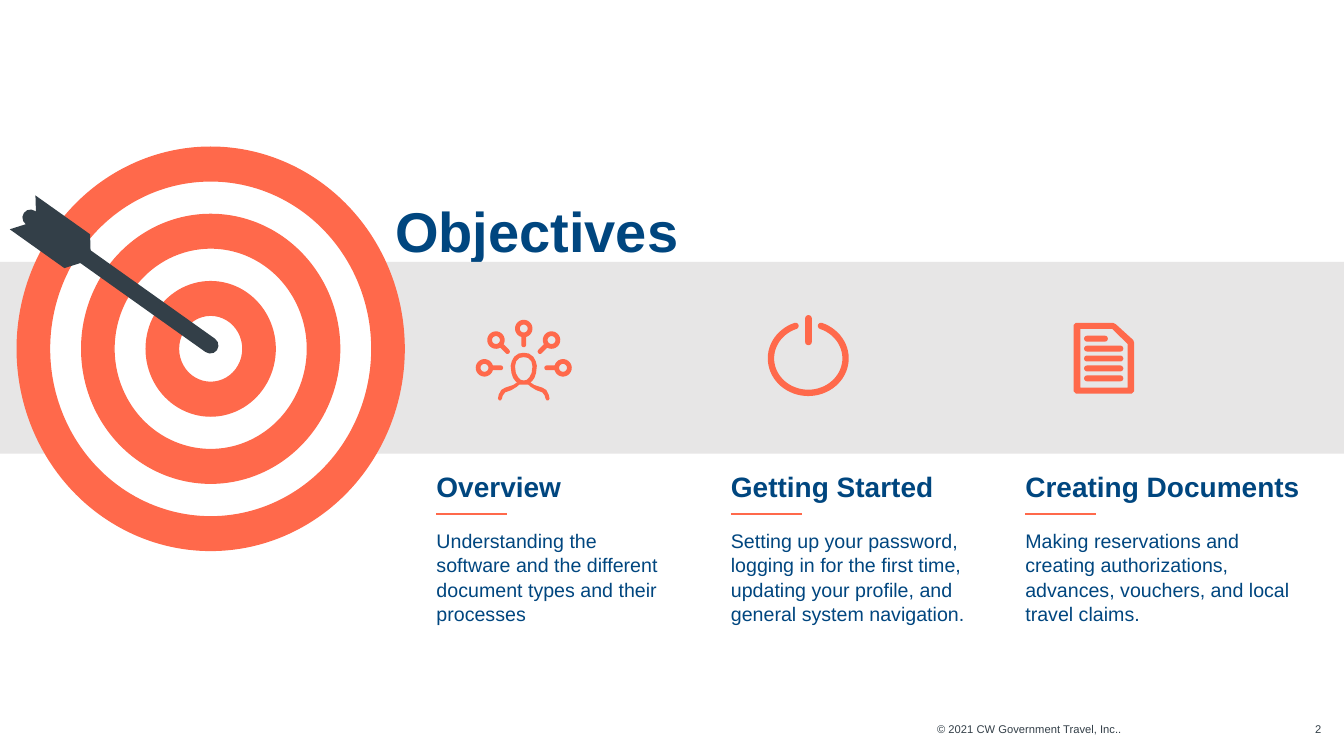
from math import asin, cos, degrees, radians, sin

from lxml.etree import SubElement
from pptx import Presentation
from pptx.dml.color import RGBColor
from pptx.enum.shapes import MSO_CONNECTOR as Line, MSO_SHAPE as Kind
from pptx.enum.text import MSO_ANCHOR as Anchor, MSO_AUTO_SIZE as Fit, PP_ALIGN as Align
from pptx.oxml.ns import qn
from pptx.util import Cm, Pt

CORAL, NAVY, SLATE, WHITE, GREY = "FF694B", "00467F", "333F48", "FFFFFF", "E7E6E6"


def tint(code):
    """Turn a hex string into a colour."""
    return RGBColor.from_string(code)


def paint(shape, fill, edge=None):
    """Give a shape its fill and optional outline."""
    shape.shadow.inherit = False
    shape.fill.solid()
    shape.fill.fore_color.rgb = tint(fill)
    if edge:
        shape.line.color.rgb = tint(edge)
        shape.line.width = Pt(1)
    else:
        shape.line.fill.background()
    return shape


def draw(shapes, kind, box, fill, edge=None):
    """Add a painted preset shape in a box given in centimetres."""
    return paint(shapes.add_shape(kind, *map(Cm, box)), fill, edge)


def pill(shapes, box, fill):
    """Add a bar with fully rounded ends."""
    bar = draw(shapes, Kind.ROUNDED_RECTANGLE, box, fill)
    bar.adjustments[0] = 0.5
    return bar


def outline(shapes, x, y, loops, fill):
    """Add one freeform made of closed loops placed relative to x, y."""
    pen = None
    for loop in loops:
        first, *rest = [(Cm(x + dx), Cm(y + dy)) for dx, dy in loop]
        if pen is None:
            pen = shapes.build_freeform(*first, scale=1.0)
        else:
            pen.move_to(*first)
        pen.add_line_segments(rest, close=True)
    return paint(pen.convert_to_shape(), fill)


def arc(x, y, wide, high, start, stop, steps=24):
    """List points along an elliptic arc, in degrees clockwise from the right."""
    turns = [radians(start + (stop - start) * i / steps) for i in range(steps + 1)]
    return [(x + wide * cos(t), y + high * sin(t)) for t in turns]


def mirror(half):
    """Close a right half outline with its left reflection."""
    return half + [(-x, y) for x, y in reversed(half) if x]


def write(shape, text, size=14, color=NAVY, bold=False, align=Align.LEFT, space=None):
    """Put formatted text into a shape without margins."""
    frame = shape.text_frame
    frame.auto_size = Fit.NONE
    frame.word_wrap = True
    frame.vertical_anchor = Anchor.TOP
    frame.margin_left = frame.margin_right = frame.margin_top = frame.margin_bottom = 0
    para = frame.paragraphs[0]
    para.text = text
    para.alignment = align
    if space:
        para.line_spacing = space
    font = para.runs[0].font
    font.name, font.size, font.bold = "Arial", Pt(size), bold
    font.color.rgb = tint(color)


def label(shapes, box, text, **style):
    """Add a text box with formatted text."""
    write(shapes.add_textbox(*map(Cm, box)), text, **style)


def target(shapes, x, y, wide, high):
    """Draw the rings of the target around its centre."""
    count = 6
    for i in range(count):
        w, h = wide * (count - i) / count, high * (count - i) / count
        box = (x - w / 2, y - h / 2, w, h)
        draw(shapes, Kind.OVAL, box, WHITE if i % 2 else CORAL, CORAL)


def dart(shapes, x, y):
    """Draw the dart whose shaft is centred on x, y."""
    tilt = 35.4
    pill(shapes, (x - 2.98, y - 0.2, 5.97, 0.41), SLATE).rotation = tilt
    for dx, dy, flip in ((-2.42, -1.63, True), (-2.86, -1.07, False)):
        vane = draw(shapes, Kind.PARALLELOGRAM, (x + dx, y + dy, 1.96, 0.36), SLATE)
        vane.adjustments[0] = 0.753
        vane.rotation = tilt
        if flip:
            vane.element.spPr.find(qn("a:xfrm")).set("flipH", "1")


def person(shapes, x, y):
    """Draw a person under a fan of five linked nodes."""
    y += 0.24
    reach, ring, hole, stem, end = 0.99, 0.22, 0.1, 0.06, 0.41
    gap = degrees(asin(stem / ring))
    for turn in range(180, 361, 45):
        back = turn + 180
        tip = end * cos(radians(back)), end * sin(radians(back))
        edge = arc(0, 0, ring, ring, back + gap, back + 360 - gap)
        cap = arc(*tip, stem, stem, back - 90, back + 90, 8)
        spot = radians(turn)
        outline(shapes, x + reach * cos(spot), y + reach * sin(spot),
                [edge + cap, arc(0, 0, hole, hole, 0, 360)], CORAL)
    body = [(0, -0.38), (0.13, -0.36), (0.24, -0.28), (0.3, -0.17), (0.33, -0.05),
            (0.31, 0.13), (0.27, 0.25), (0.22, 0.32), (0.17, 0.37), (0.26, 0.43),
            (0.47, 0.5), (0.57, 0.56), (0.63, 0.68), (0.65, 0.78), (0.62, 0.82),
            (0.58, 0.82), (0.55, 0.78), (0.53, 0.7), (0.47, 0.62), (0.31, 0.56),
            (0.18, 0.48), (0.11, 0.42), (0, 0.42)]
    face = [(0, -0.27), (0.11, -0.25), (0.19, -0.17), (0.22, -0.04), (0.2, 0.13),
            (0.14, 0.24), (0.08, 0.3), (0, 0.32)]
    outline(shapes, x, y, [mirror(body), mirror(face)], CORAL)


def power(shapes, x, y):
    """Draw a power button symbol."""
    start, stop, wide, high, half = -70, 250, 0.94, 0.87, 0.08
    head, tail = (arc(0, 0, wide, high, a, a, 1)[0] for a in (start, stop))
    loop = (arc(0, 0, wide + half, high + half, start, stop, 60)
            + arc(*tail, half, half, stop, stop + 180, 8)
            + arc(0, 0, wide - half, high - half, stop, start, 60)
            + arc(*head, half, half, start + 180, start + 360, 8))
    outline(shapes, x, y, [loop], CORAL)
    pill(shapes, (x - 0.08, y - 1.09, 0.17, 0.76), CORAL)


def paper(shapes, x, y):
    """Draw a page with a cut corner and five lines of text."""
    x, y = x - 0.76, y - 0.89
    rim = [(0, 0.05), (0.05, 0), (1, 0), (1.06, 0.03), (1.5, 0.43), (1.52, 0.49),
           (1.52, 1.72), (1.46, 1.78), (0.06, 1.78), (0, 1.72)]
    page = [(0.17, 0.15), (0.97, 0.15), (1.36, 0.53), (1.36, 1.63), (0.17, 1.63)]
    outline(shapes, x, y, [rim, page], CORAL)
    for i in range(5):
        pill(shapes, (x + 0.26, y + 0.32 + 0.25 * i, 0.99 if i else 0.6, 0.15), CORAL)


def column(shapes, x, y, wide, name, text):
    """Place a heading, its rule and the text below."""
    label(shapes, (x, y, 6.99, 1.1), name, size=20, bold=True)
    rule = shapes.add_connector(Line.STRAIGHT, *map(Cm, (x, y + 1.12, x + 1.78, y + 1.12)))
    rule.line.color.rgb = tint(CORAL)
    rule.line.width = Pt(1.5)
    SubElement(rule.element.spPr, qn("a:effectLst"))
    label(shapes, (x, y + 1.47, wide, 4.3), text, space=1.04)


def footer(shapes, y):
    """Place the copyright line and the page number."""
    for x, wide, text in ((21.3, 6.97, "© 2021 CW Government Travel, Inc.."), (32.7, 0.6, "2")):
        label(shapes, (x, y, wide, 0.36), text, size=8, color=SLATE, align=Align.RIGHT)


def main():
    """Build the objectives slide."""
    deck = Presentation()
    deck.slide_width, deck.slide_height = Cm(33.87), Cm(19.05)
    slide = deck.slides.add_slide(deck.slide_layouts[5])
    shapes = slide.shapes
    title = shapes.title
    title.left, title.top, title.width, title.height = map(Cm, (9.96, 4.96, 9.96, 1.5))
    write(title, "Objectives", size=40, bold=True)
    footer(shapes, 18.21)
    draw(shapes, Kind.RECTANGLE, (0, 6.6, 33.87, 4.83), GREY)
    target(shapes.add_group_shape().shapes, 5.31, 8.79, 9.75, 10.16)
    dart(shapes.add_group_shape().shapes, 3.03, 7.09)
    parts = (
        ("Overview", "Understanding the software and the different document types "
         "and their processes", 5.92, person, 2.2),
        ("Getting Started", "Setting up your password, logging in for the first time, "
         "updating your profile, and general system navigation.", 5.92, power, 1.95),
        ("Creating Documents", "Making reservations and creating authorizations, "
         "advances, vouchers, and local travel claims.", 6.88, paper, 1.98),
    )
    for i, (name, text, wide, icon, shift) in enumerate(parts):
        x = 11 + 7.42 * i
        column(shapes.add_group_shape().shapes, x, 11.83, wide, name, text)
        icon(shapes.add_group_shape().shapes, x + shift, 9.03)
    deck.save("out.pptx")


if __name__ == "__main__":
    main()
